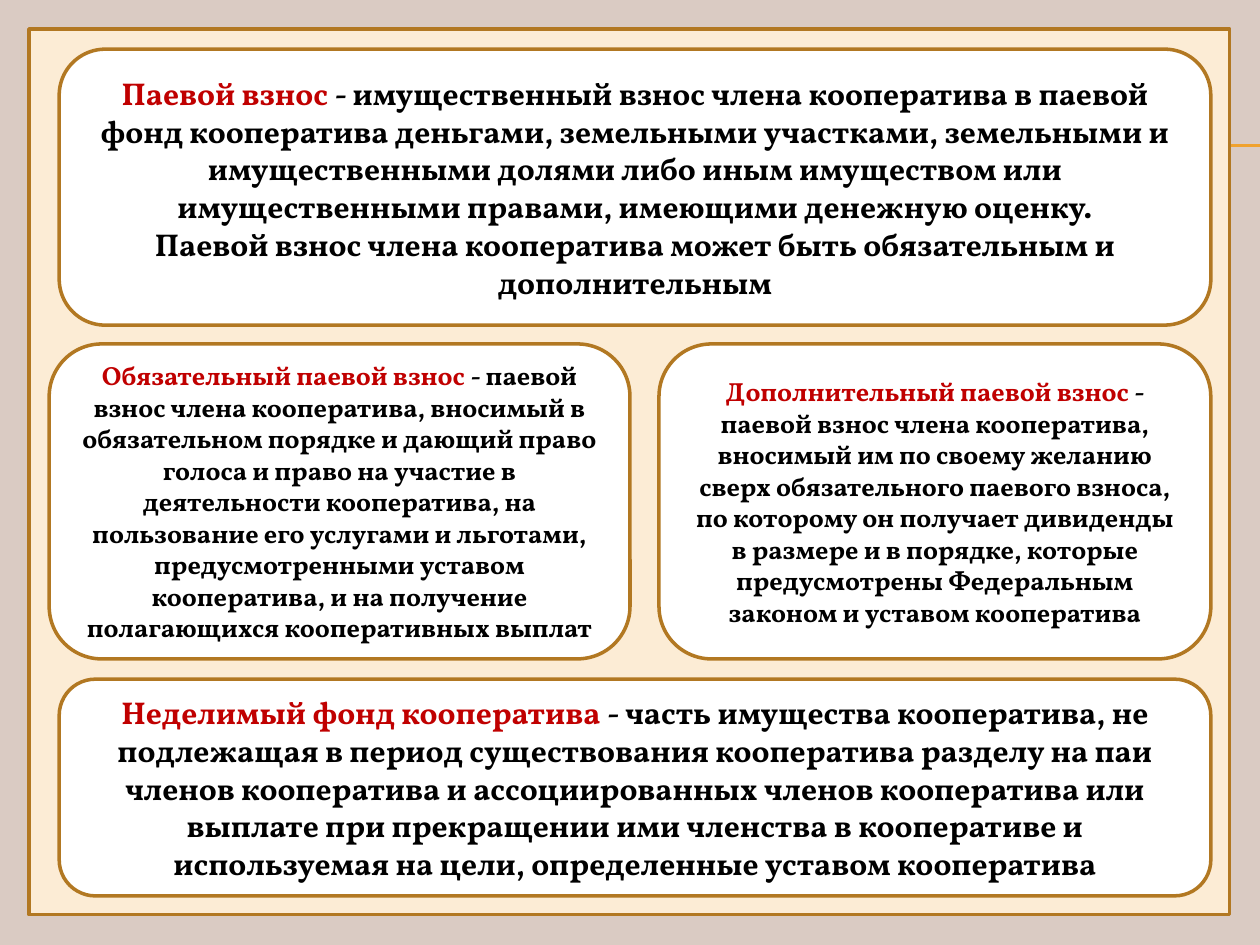
from dataclasses import dataclass

from lxml.etree import SubElement
from pptx import Presentation
from pptx.dml.color import RGBColor
from pptx.enum.shapes import MSO_CONNECTOR, MSO_SHAPE
from pptx.enum.text import MSO_ANCHOR, PP_ALIGN
from pptx.oxml.ns import qn
from pptx.util import Inches, Pt

COLORS = {
    "background": "DACBC3",
    "panel": "FCECD5",
    "card": "FFFFFF",
    "outline": "B27822",
    "rule": "F0A22E",
    "term": "C00000",
    "text": "000000",
}
FONT = "Vollkorn"

CARD_LEFT, CARD_RIGHT = 0.47, 9.61
MIDDLE_TOP, MIDDLE_HEIGHT = 2.73, 2.5


@dataclass
class Card:
    left: float
    top: float
    width: float
    height: float
    size: int
    term: str
    definition: str
    addition: str = ""


CARDS = [
    Card(CARD_LEFT, 0.39, CARD_RIGHT - CARD_LEFT, 2.19, 18,
         "Паевой взнос ",
         "- имущественный взнос члена кооператива в паевой фонд кооператива "
         "деньгами, земельными участками, земельными и имущественными долями "
         "либо иным имуществом или имущественными правами, имеющими денежную "
         "оценку.",
         "Паевой взнос члена кооператива может быть обязательным и "
         "дополнительным"),
    Card(0.39, MIDDLE_TOP, 4.61, MIDDLE_HEIGHT, 15,
         "Обязательный паевой взнос ",
         "- паевой взнос члена кооператива, вносимый в обязательном порядке и "
         "дающий право голоса и право на участие в деятельности кооператива, "
         "на пользование его услугами и льготами, предусмотренными уставом "
         "кооператива, и на получение полагающихся кооперативных выплат"),
    Card(5.23, MIDDLE_TOP, CARD_RIGHT - 5.23, MIDDLE_HEIGHT, 15,
         "Дополнительный паевой взнос",
         " - паевой взнос члена кооператива, вносимый им по своему желанию "
         "сверх обязательного паевого взноса, по которому он получает "
         "дивиденды в размере и в порядке, которые предусмотрены Федеральным "
         "законом и уставом кооператива"),
    Card(CARD_LEFT, 5.39, CARD_RIGHT - CARD_LEFT, 1.72, 18,
         "Неделимый фонд кооператива ",
         "- часть имущества кооператива, не подлежащая в период существования "
         "кооператива разделу на паи членов кооператива и ассоциированных "
         "членов кооператива или выплате при прекращении ими членства в "
         "кооперативе и используемая на цели, определенные уставом "
         "кооператива"),
]


def color(name: str) -> RGBColor:
    return RGBColor.from_string(COLORS[name])


def add_rule(page, top: float) -> None:
    rule = page.shapes.add_connector(
        MSO_CONNECTOR.STRAIGHT,
        Inches(0.56), Inches(top), Inches(10), Inches(top))
    rule.line.color.rgb = color("rule")
    rule.line.width = Pt(0.75)
    SubElement(rule._element.spPr, qn("a:effectLst"))


def add_box(page, kind: MSO_SHAPE, left: float, top: float,
            width: float, height: float, fill: str):
    box = page.shapes.add_shape(
        kind, Inches(left), Inches(top), Inches(width), Inches(height))
    box.shadow.inherit = False
    box.fill.solid()
    box.fill.fore_color.rgb = color(fill)
    box.line.color.rgb = color("outline")
    box.line.width = Pt(2)
    return box


def add_span(para, text: str, size: int, color_name: str) -> None:
    span = para.add_run()
    span.text = text
    span.font.name = FONT
    span.font.size = Pt(size)
    span.font.bold = True
    span.font.color.rgb = color(color_name)


def add_card(page, card: Card) -> None:
    box = add_box(page, MSO_SHAPE.ROUNDED_RECTANGLE, card.left, card.top,
                  card.width, card.height, "card")
    frame = box.text_frame
    frame.word_wrap = True
    frame.vertical_anchor = MSO_ANCHOR.MIDDLE
    para = frame.paragraphs[0]
    add_span(para, card.term, card.size, "term")
    add_span(para, card.definition, card.size, "text")
    if card.addition:
        add_span(frame.add_paragraph(), card.addition, card.size, "text")
    for para in frame.paragraphs:
        para.alignment = PP_ALIGN.CENTER


def main() -> None:
    deck = Presentation()
    deck.slide_width, deck.slide_height = Inches(10), Inches(7.5)
    page = deck.slides.add_slide(deck.slide_layouts[6])
    page.background.fill.solid()
    page.background.fill.fore_color.rgb = color("background")

    for top in (1.15, 1.16):
        add_rule(page, top)
    add_box(page, MSO_SHAPE.RECTANGLE, 0.23, 0.23, 9.53, 7.03, "panel")
    for card in CARDS:
        add_card(page, card)
    deck.save("out.pptx")


if __name__ == "__main__":
    main()
